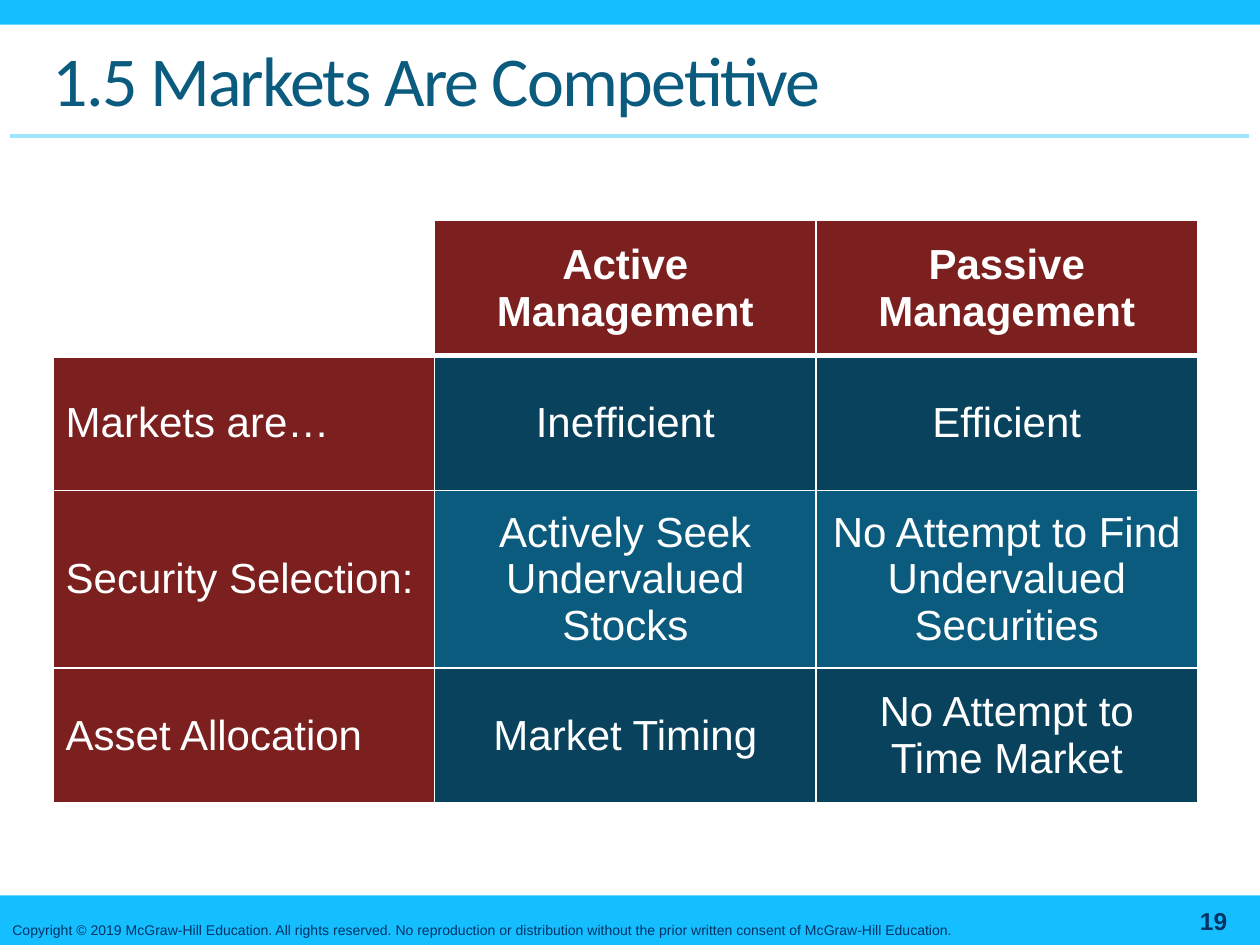
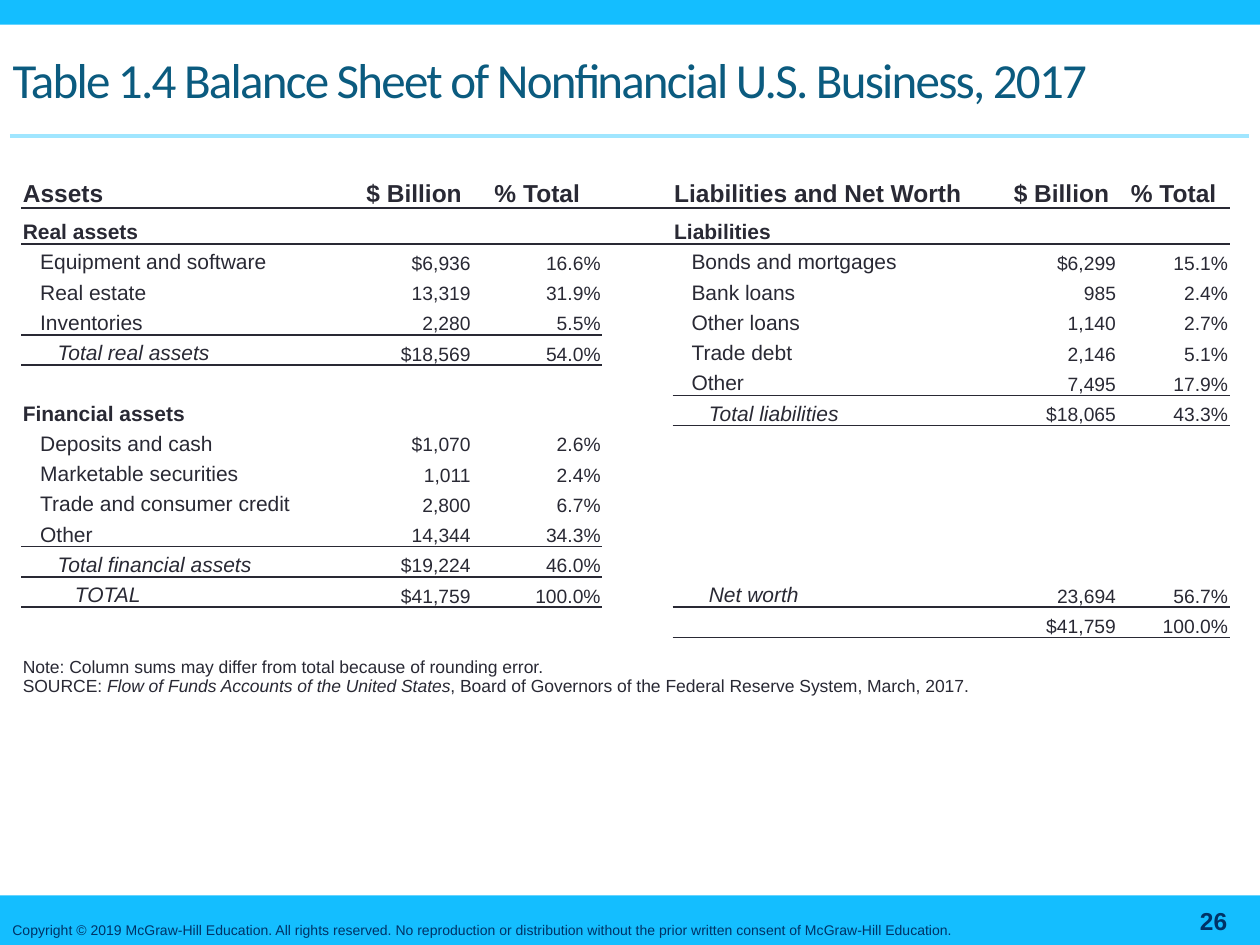
from dataclasses import dataclass
from itertools import product

from lxml import etree
from pptx import Presentation
from pptx.dml.color import RGBColor
from pptx.enum.shapes import MSO_CONNECTOR, MSO_SHAPE
from pptx.enum.text import MSO_ANCHOR, MSO_AUTO_SIZE, PP_ALIGN
from pptx.oxml.ns import qn
from pptx.slide import Slide
from pptx.table import Table, _Cell
from pptx.text.text import _Paragraph
from pptx.util import Cm, Pt

RECTANGLE = MSO_SHAPE.RECTANGLE
STRAIGHT = MSO_CONNECTOR.STRAIGHT
LEFT, CENTER, RIGHT = PP_ALIGN.LEFT, PP_ALIGN.CENTER, PP_ALIGN.RIGHT
MIDDLE, BOTTOM = MSO_ANCHOR.MIDDLE, MSO_ANCHOR.BOTTOM
NO_AUTOFIT = MSO_AUTO_SIZE.NONE

BAND_BLUE = RGBColor(0x14, 0xBE, 0xFF)
RULE_BLUE = RGBColor(0xA0, 0xE6, 0xFF)
FOOTER_NAVY = RGBColor(0x00, 0x33, 0x66)
TEAL = RGBColor(0x0B, 0x5B, 0x7F)
DARK_TEAL = RGBColor(0x08, 0x42, 0x5C)
MAROON = RGBColor(0x7B, 0x1F, 0x1F)
INK = RGBColor(0x29, 0x29, 0x34)
WHITE = RGBColor(0xFF, 0xFF, 0xFF)

SLIDE_WIDTH, SLIDE_HEIGHT = 25.4, 19.05
PLAIN_TABLE_STYLE = "{2D5ABB26-0587-4C30-8999-92F81FD0307C}"
COPYRIGHT = (
    "Copyright © 2019 McGraw-Hill Education. All rights reserved. No reproduction or "
    "distribution without the prior written consent of McGraw-Hill Education."
)


@dataclass(frozen=True)
class TextStyle:
    size: float
    color: RGBColor
    bold: bool = False
    italic: bool = False
    align: PP_ALIGN = LEFT
    font: str = "Arial"


@dataclass(frozen=True)
class Box:
    left: float
    top: float
    width: float
    height: float

    def lengths(self) -> tuple[Cm, Cm, Cm, Cm]:
        return Cm(self.left), Cm(self.top), Cm(self.width), Cm(self.height)


@dataclass(frozen=True)
class BalanceLine:
    row: int
    label: str
    level: int
    amount: str = ""
    share: str = ""


@dataclass(frozen=True)
class BalanceSide:
    heading: str
    label_columns: tuple[int, int]
    amount_column: int
    ruled_columns: range
    ruled_rows: tuple[int, ...]
    lines: tuple[BalanceLine, ...]


BANDS = (Box(0, 0, SLIDE_WIDTH, 0.5), Box(0, 18.05, SLIDE_WIDTH, 1))
NUMBER_BOX = Box(22.02, 18.11, 2.97, 0.91)
COPYRIGHT_BOX = Box(0, 18.34, SLIDE_WIDTH, 0.71)
NUMBER_STYLE = TextStyle(14, FOOTER_NAVY, bold=True, align=RIGHT)
COPYRIGHT_STYLE = TextStyle(8, FOOTER_NAVY)

MANAGEMENT_ROWS = (
    ("", "Active Management", "Passive Management"),
    ("Markets are…", "Inefficient", "Efficient"),
    ("Security Selection:", "Actively Seek Undervalued Stocks",
     "No Attempt to Find Undervalued Securities"),
    ("Asset Allocation", "Market Timing", "No Attempt to Time Market"),
)
MANAGEMENT_HEIGHTS = (2.72, 2.72, 3.58, 2.72)

ASSETS = BalanceSide("Assets", (0, 1), 2, range(0, 4), (4, 11, 12), (
    BalanceLine(1, "Real assets", 0),
    BalanceLine(2, "Equipment and software", 1, "$6,936", "16.6%"),
    BalanceLine(3, "Real estate", 1, "13,319", "31.9%"),
    BalanceLine(4, "Inventories", 1, "2,280", "5.5%"),
    BalanceLine(5, "Total real assets", 2, "$18,569", "54.0%"),
    BalanceLine(7, "Financial assets", 0),
    BalanceLine(8, "Deposits and cash", 1, "$1,070", "2.6%"),
    BalanceLine(9, "Marketable securities", 1, "1,011", "2.4%"),
    BalanceLine(10, "Trade and consumer credit", 1, "2,800", "6.7%"),
    BalanceLine(11, "Other", 1, "14,344", "34.3%"),
    BalanceLine(12, "Total financial assets", 2, "$19,224", "46.0%"),
    BalanceLine(13, "TOTAL", 3, "$41,759", "100.0%"),
))
LIABILITIES = BalanceSide("Liabilities and Net Worth", (5, 8), 9, range(5, 11), (6, 13), (
    BalanceLine(1, "Liabilities", 0),
    BalanceLine(2, "Bonds and mortgages", 1, "$6,299", "15.1%"),
    BalanceLine(3, "Bank loans", 1, "985", "2.4%"),
    BalanceLine(4, "Other loans", 1, "1,140", "2.7%"),
    BalanceLine(5, "Trade debt", 1, "2,146", "5.1%"),
    BalanceLine(6, "Other", 1, "7,495", "17.9%"),
    BalanceLine(7, "Total liabilities", 2, "$18,065", "43.3%"),
    BalanceLine(13, "Net worth", 2, "23,694", "56.7%"),
    BalanceLine(14, "", 0, "$41,759", "100.0%"),
))
BALANCE_WIDTHS = (3.84, 2.91, 2.34, 2.62, 1.42, 3.1, 2.26, 0.79, 0.56, 2.26, 2.26)
BALANCE_HEIGHTS = (0.81, 0.73, *[0.61] * 13, 1.19)
NOTE_ROW = len(BALANCE_HEIGHTS) - 1
CELL_INSET = 0.03
LEVEL_INDENT = 0.35


def format_paragraph(paragraph: _Paragraph, style: TextStyle) -> None:
    paragraph.alignment = style.align
    font = paragraph.font
    font.name = style.font
    font.size = Pt(style.size)
    font.bold = style.bold
    font.italic = style.italic
    font.color.rgb = style.color


def add_text(slide: Slide, text: str, box: Box, style: TextStyle, anchor: MSO_ANCHOR) -> None:
    frame = slide.shapes.add_textbox(*box.lengths()).text_frame
    frame.word_wrap = True
    frame.vertical_anchor = anchor
    frame.text = text
    format_paragraph(frame.paragraphs[0], style)


def add_titled_slide(presentation: Presentation, title: str, box: Box, size: float,
                     number: int) -> Slide:
    slide = presentation.slides.add_slide(presentation.slide_layouts[5])
    for band in BANDS:
        shape = slide.shapes.add_shape(RECTANGLE, *band.lengths())
        shape.shadow.inherit = False
        shape.fill.solid()
        shape.fill.fore_color.rgb = BAND_BLUE
        shape.line.fill.background()
    rule = slide.shapes.add_connector(STRAIGHT, Cm(0.2), Cm(2.74), Cm(25.17), Cm(2.74))
    rule.line.color.rgb = RULE_BLUE
    rule.line.width = Pt(2.25)
    etree.SubElement(rule.element.spPr, qn("a:effectLst"))
    add_text(slide, str(number), NUMBER_BOX, NUMBER_STYLE, MIDDLE)
    add_text(slide, COPYRIGHT, COPYRIGHT_BOX, COPYRIGHT_STYLE, BOTTOM)

    heading = slide.shapes.title
    heading.left, heading.top, heading.width, heading.height = box.lengths()
    frame = heading.text_frame
    frame.text = title
    frame.auto_size = NO_AUTOFIT
    frame.vertical_anchor = MIDDLE
    paragraph = frame.paragraphs[0]
    format_paragraph(paragraph, TextStyle(size, TEAL, font="Calibri"))
    paragraph.runs[0].font._element.set("spc", "-100")
    return slide


def add_plain_table(slide: Slide, left: float, top: float, widths: tuple[float, ...],
                    heights: tuple[float, ...]) -> Table:
    box = Box(left, top, sum(widths), sum(heights))
    frame = slide.shapes.add_table(len(heights), len(widths), *box.lengths())
    frame.element.find(".//" + qn("a:tableStyleId")).text = PLAIN_TABLE_STYLE
    table = frame.table
    table.first_row = table.horz_banding = False
    for column, width in zip(table.columns, widths):
        column.width = Cm(width)
    for row, height in zip(table.rows, heights):
        row.height = Cm(height)
    return table


def set_borders(cell: _Cell, color: RGBColor, **widths: float) -> None:
    properties = cell._tc.get_or_add_tcPr()
    for side in "LRTB":
        if side in widths:
            line = etree.SubElement(properties, qn(f"a:ln{side}"), w=str(Pt(widths[side])))
            fill = etree.SubElement(line, qn("a:solidFill"))
            etree.SubElement(fill, qn("a:srgbClr"), val=str(color))


def write_cell(cell: _Cell, text: str, style: TextStyle, anchor: MSO_ANCHOR) -> None:
    cell.text = text
    cell.vertical_anchor = anchor
    format_paragraph(cell.text_frame.paragraphs[0], style)


def management_fill(row: int, column: int) -> RGBColor:
    if row == 0 or column == 0:
        return MAROON
    return DARK_TEAL if row % 2 else TEAL


def add_management_table(slide: Slide) -> None:
    table = add_plain_table(slide, 1.07, 4.45, (7.69,) * 3, MANAGEMENT_HEIGHTS)
    for row, texts in enumerate(MANAGEMENT_ROWS):
        for column, text in enumerate(texts):
            cell = table.cell(row, column)
            style = TextStyle(24, WHITE, bold=row == 0, align=CENTER if column else LEFT)
            write_cell(cell, text, style, MIDDLE)
            set_borders(cell, WHITE, L=1, R=1, T=3 if row == 1 else 1, B=1 if row else 3)
            if text:
                cell.fill.solid()
                cell.fill.fore_color.rgb = management_fill(row, column)


def rule_below(table: Table, row: int, columns: range) -> None:
    for column in columns:
        set_borders(table.cell(row + 1, column), INK, T=1)
        set_borders(table.cell(row, column), INK, B=1)


def fill_balance_side(table: Table, side: BalanceSide) -> None:
    first, last = side.label_columns
    lines = (BalanceLine(0, side.heading, 0, "$ Billion", "% Total"), *side.lines)
    for line in lines:
        is_header = line.row == 0
        label = table.cell(line.row, first)
        if line.label:
            label.merge(table.cell(line.row, last))
        style = TextStyle(14 if is_header else 12, INK, line.level == 0, line.level > 1)
        write_cell(label, line.label, style, BOTTOM)
        label.margin_left = Cm(CELL_INSET + LEVEL_INDENT * line.level)
        value_style = (TextStyle(14, INK, bold=True, align=CENTER) if is_header
                       else TextStyle(11, INK, align=RIGHT))
        for offset, value in enumerate((line.amount, line.share)):
            write_cell(table.cell(line.row, side.amount_column + offset), value,
                       value_style, BOTTOM)
    for row in side.ruled_rows:
        rule_below(table, row, side.ruled_columns)


def add_balance_note(table: Table) -> None:
    cell = table.cell(NOTE_ROW, 0)
    cell.merge(table.cell(NOTE_ROW, len(BALANCE_WIDTHS) - 1))
    style = TextStyle(10, INK)
    write_cell(cell, "Note: Column sums may differ from total because of rounding error.",
               style, BOTTOM)
    source = cell.text_frame.add_paragraph()
    format_paragraph(source, style)
    for text, italic in (
        ("SOURCE: ", False),
        ("Flow of Funds Accounts of the United States", True),
        (", Board of Governors of the Federal Reserve System, March, 2017.", False),
    ):
        run = source.add_run()
        run.text = text
        run.font.italic = italic


def add_balance_table(slide: Slide) -> None:
    table = add_plain_table(slide, 0.43, 3.38, BALANCE_WIDTHS, BALANCE_HEIGHTS)
    for row, column in product(range(len(BALANCE_HEIGHTS)), range(len(BALANCE_WIDTHS))):
        cell = table.cell(row, column)
        cell.margin_left = cell.margin_right = cell.margin_top = Cm(CELL_INSET)
        cell.margin_bottom = 0
        format_paragraph(cell.text_frame.paragraphs[0], TextStyle(10, INK))
    rule_below(table, 0, range(len(BALANCE_WIDTHS)))
    for side in (ASSETS, LIABILITIES):
        fill_balance_side(table, side)
    add_balance_note(table)


def main() -> None:
    presentation = Presentation()
    presentation.slide_width, presentation.slide_height = Cm(SLIDE_WIDTH), Cm(SLIDE_HEIGHT)
    add_management_table(add_titled_slide(
        presentation, "1.5 Markets Are Competitive", Box(0.81, 0.43, 23.8, 2.31), 40, 19))
    add_balance_table(add_titled_slide(
        presentation, "Table 1.4 Balance Sheet of Nonfinancial U.S. Business, 2017",
        Box(0, 0.43, SLIDE_WIDTH, 2.31), 28, 26))
    presentation.save("out.pptx")


if __name__ == "__main__":
    main()
